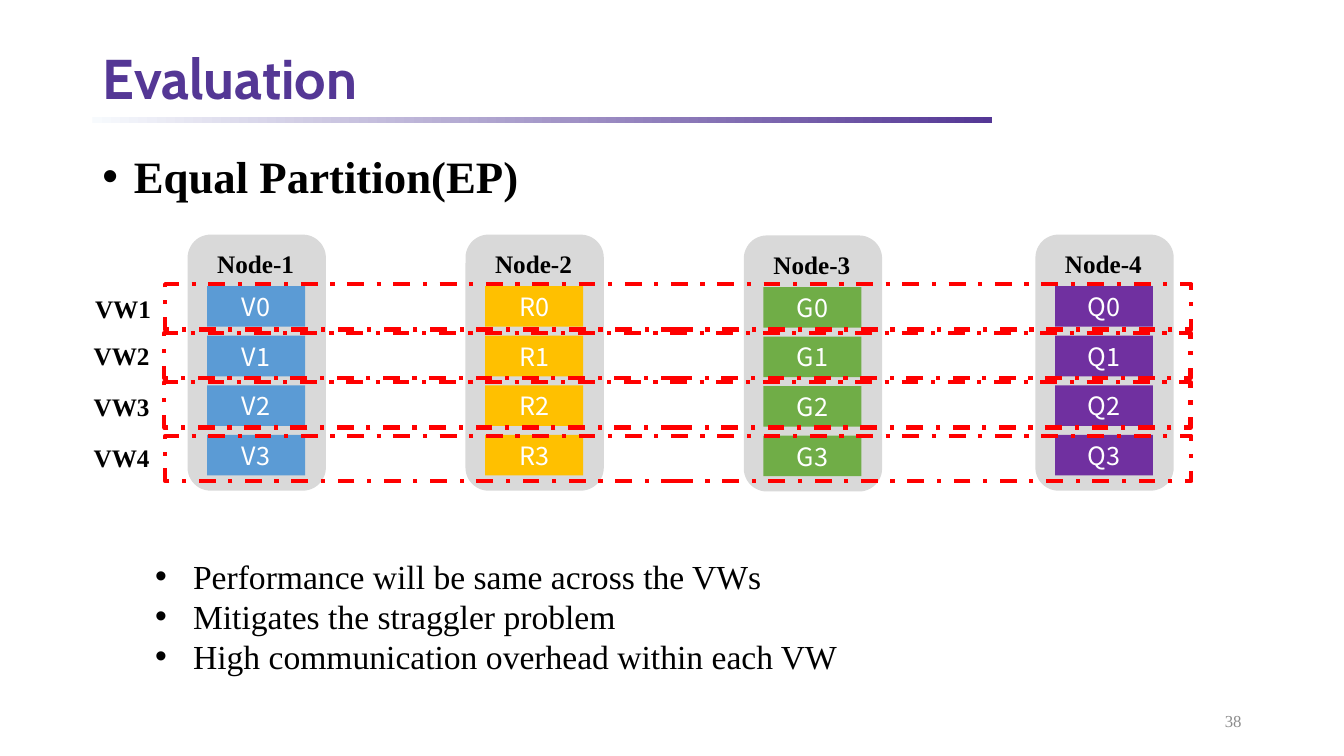
"""Builds the Equal Partition evaluation slide."""
from lxml import etree
from pptx import Presentation
from pptx import util as u
from pptx.dml.color import RGBColor
from pptx.enum import dml, shapes, text
from pptx.oxml.ns import qn

SERIF = "Times New Roman"
ALIGN = text.PP_ALIGN
ANCHOR = text.MSO_ANCHOR


def color(hex_value):
    return RGBColor.from_string(hex_value)


def write(shape, lines, size, ink="000000", name=SERIF, bold=False, align=ALIGN.LEFT,
          anchor=ANCHOR.TOP, wrap=True, indent=0, spacing=None):
    frame = shape.text_frame
    frame.word_wrap = wrap
    frame.vertical_anchor = anchor
    frame.text = "\n".join(lines)
    for paragraph in frame.paragraphs:
        paragraph.alignment = align
        if spacing:
            paragraph.line_spacing = spacing
        if indent:
            props = paragraph._p.get_or_add_pPr()
            props.set("marL", str(u.Pt(indent)))
            props.set("indent", str(-u.Pt(indent)))
            etree.SubElement(props, qn("a:buFont")).set("typeface", "Arial")
            etree.SubElement(props, qn("a:buChar")).set("char", "•")
        for key, value in {"size": u.Pt(size), "name": name, "bold": bold}.items():
            setattr(paragraph.font, key, value)
        paragraph.font.color.rgb = color(ink)


deck = Presentation()
deck.slide_width, deck.slide_height = u.Pt(960), u.Pt(540)
slide = deck.slides.add_slide(deck.slide_layouts[6])
items = slide.shapes
RECT = shapes.MSO_SHAPE.RECTANGLE
ROUNDED = shapes.MSO_SHAPE.ROUNDED_RECTANGLE

rule = items.add_shape(RECT, u.Pt(66), u.Pt(83.8), u.Pt(642.5), u.Pt(4))
rule.shadow.inherit = False
rule.line.fill.background()
rule.fill.gradient()
rule.fill.gradient_angle = 0
for stop, (position, shade) in zip(rule.fill.gradient_stops, [(0, "F7FAFD"), (1, "543795")]):
    stop.position = position
    stop.color.rgb = color(shade)

title = items.add_textbox(u.Pt(66), u.Pt(31), u.Pt(828), u.Pt(54))
write(title, ["Evaluation"], 40, "543795", "Cabin", True, anchor=ANCHOR.MIDDLE, spacing=0.9)
page_number = items.add_textbox(u.Pt(678), u.Pt(500.5), u.Pt(216), u.Pt(28.8))
write(page_number, ["38"], 12, "8C8C8C", align=ALIGN.RIGHT, anchor=ANCHOR.MIDDLE)

nodes = [("V", "5B9BD5", 134, 167.6), ("R", "FFC000", 332.5, 167.6),
         ("G", "70AD47", 531.3, 168.2), ("Q", "7030A0", 739.6, 167.6)]
for number, (gpu, shade, left, top) in enumerate(nodes, 1):
    node = items.add_shape(ROUNDED, u.Pt(left), u.Pt(top), u.Pt(98.8), u.Pt(182.9))
    node_name = items.add_textbox(u.Pt(left + 14), u.Pt(top + 6), u.Pt(70), u.Pt(29))
    write(node_name, [f"Node-{number}"], 18, bold=True, wrap=False)
    gpus = [items.add_shape(RECT, u.Pt(left + 14), u.Pt(top + 36.8 + 35.4 * row),
                            u.Pt(70), u.Pt(29)) for row in range(4)]
    for row, chip in enumerate(gpus):
        write(chip, [f"{gpu}{row}"], 18, "FFFFFF", "Noto Sans CJK SC",
              align=ALIGN.CENTER, anchor=ANCHOR.MIDDLE)
    for block, fill in [(node, "D9D9D9")] + [(chip, shade) for chip in gpus]:
        block.shadow.inherit = False
        block.line.fill.background()
        block.fill.solid()
        block.fill.fore_color.rgb = color(fill)

heading = items.add_textbox(u.Pt(66), u.Pt(103), u.Pt(315), u.Pt(46))
write(heading, ["Equal Partition(EP)"], 32, bold=True, wrap=False, indent=22.5)

workers = [(118, 203, 60.8, 205.9), (117.4, 237.9, 59.8, 239.8),
           (117.4, 273, 59.8, 276), (118, 311.3, 59.8, 312.6)]
for number, (left, top, label_left, label_top) in enumerate(workers, 1):
    worker = items.add_shape(RECT, u.Pt(left), u.Pt(top), u.Pt(733), u.Pt(32.4))
    worker.shadow.inherit = False
    worker.fill.background()
    worker.line.color.rgb = color("FF0000")
    worker.line.width = u.Pt(3)
    worker.line.dash_style = dml.MSO_LINE.DASH_DOT
    worker_name = items.add_textbox(u.Pt(label_left), u.Pt(label_top), u.Pt(54.7), u.Pt(29))
    write(worker_name, [f"VW{number}"], 18, bold=True, wrap=False)

findings = items.add_textbox(u.Pt(103.8), u.Pt(393.3), u.Pt(570), u.Pt(94.5))
write(findings, ["Performance will be same across the VWs",
                 "Mitigates the straggler problem",
                 "High communication overhead within each VW"], 24, indent=27)

deck.save("out.pptx")
